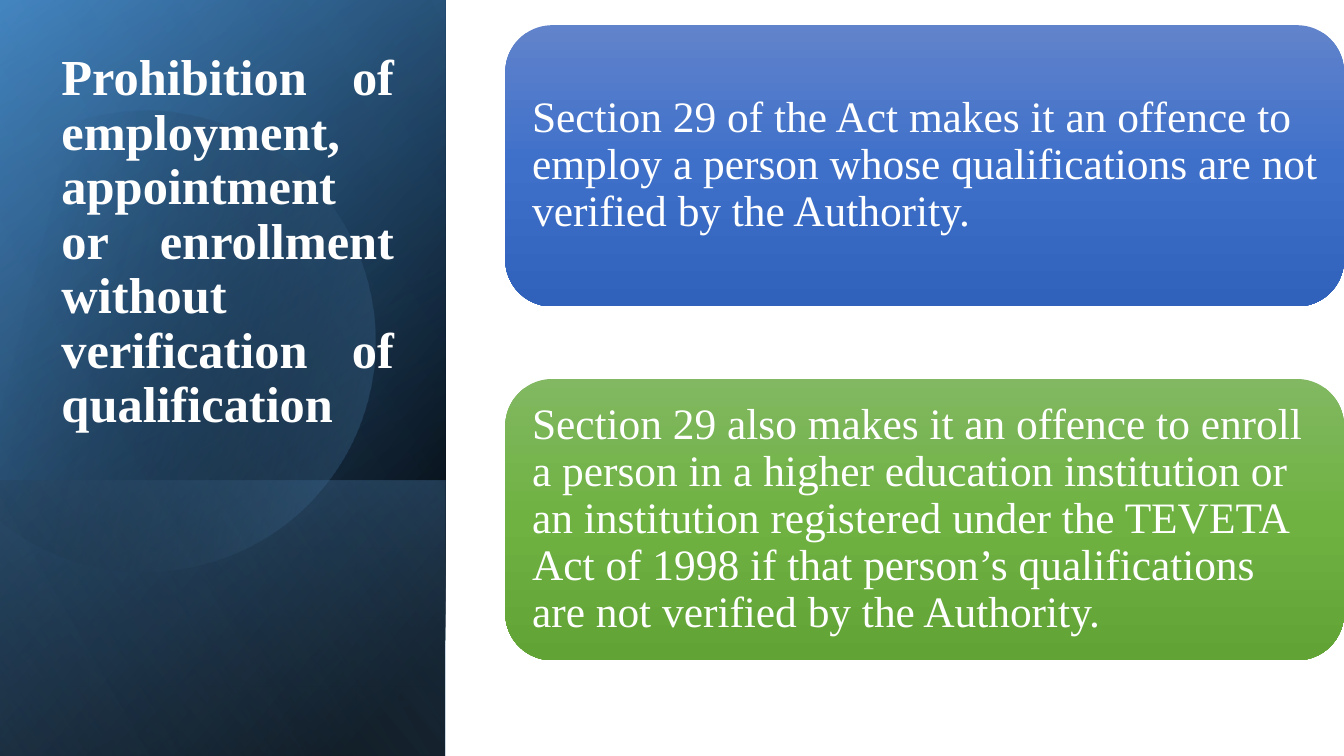
from math import cos, radians, sin

from lxml.etree import SubElement
from pptx import Presentation
from pptx.dml.color import RGBColor
from pptx.enum.shapes import MSO_SHAPE
from pptx.enum.text import MSO_ANCHOR, MSO_AUTO_SIZE, PP_ALIGN
from pptx.oxml.ns import qn
from pptx.util import Inches, Pt

SLIDE_W, SLIDE_H = 13.33, 7.5
PANEL_W = SLIDE_W * 0.3315
BAND_H = SLIDE_H * 0.365
CARD_LEFT, CARD_TOP = SLIDE_W * 0.376, SLIDE_H / 30
CARD_H, CARD_PITCH = 2.79, 3.51
FONT = "Times New Roman"
WHITE = "FFFFFF"

DISC_FRAME = (-0.55, 1.06, 4.27, 4.57)
DISC_TURN = -16.1
# Slide positions along the rim: six numbers make a curve, two a straight line.
DISC_START = (1.49, 1.1)
DISC_RIM = [
    (2.46, 1.12, 3.35, 1.77, 3.63, 2.75),
    (3.98, 3.97, 3.28, 5.23, 2.07, 5.58),
    (1.31, 5.8, 0.53, 5.61, -0.03, 5.14),
    (-0.15, 5.03),
    (-0.15, 1.75),
    (0, 1.61),
    (0.23, 1.42, 0.5, 1.28, 0.8, 1.19),
    (1.03, 1.13, 1.26, 1.1, 1.49, 1.1),
]

TITLE = ("Prohibition of employment, appointment or enrollment "
         "without verification of qualification")
CARDS = [
    ("Section 29 of the Act makes it an offence to employ a person whose "
     "qualifications are not verified by the Authority.",
     ["6183CB", "3E70CA", "3062BB"]),
    ("Section 29 also makes it an offence to enroll a person in a higher "
     "education institution or an institution registered under the TEVETA "
     "Act of 1998 if that person’s qualifications are not verified by the "
     "Authority.",
     ["81B861", "6FB242", "62A336"]),
]


def rgb(value):
    return RGBColor.from_string(value)


def apply_format(target, values):
    for name, value in values.items():
        setattr(target, name, value)


def gradient(shape, stops, angle):
    """Fill with (position %, colour, opacity %) stops, angle clockwise."""
    shape.shadow.inherit = False
    shape.line.fill.background()
    shape.fill.gradient()
    grad = shape._element.spPr.find(qn("a:gradFill"))
    for child in list(grad):
        grad.remove(child)
    grad.set("rotWithShape", "1")
    stop_list = SubElement(grad, qn("a:gsLst"))
    for position, colour, opacity in stops:
        stop = SubElement(stop_list, qn("a:gs"), pos=str(position * 1000))
        tint = SubElement(stop, qn("a:srgbClr"), val=colour)
        if opacity < 100:
            SubElement(tint, qn("a:alpha"), val=str(opacity * 1000))
    SubElement(grad, qn("a:lin"), ang=str(angle * 60000), scaled="0")


def add_panel_layer(slide, top, height, stops, angle):
    """Cover part of the left panel with a quarter-turned, mirrored rectangle."""
    left = (PANEL_W - height) / 2
    turned_top = top + (height - PANEL_W) / 2
    layer = slide.shapes.add_shape(
        MSO_SHAPE.RECTANGLE, Inches(left), Inches(turned_top),
        Inches(height), Inches(PANEL_W))
    layer.rotation = 90
    layer._element.spPr.xfrm.set("flipH", "1")
    gradient(layer, stops, angle)


def inside_disc_frame(x, y):
    """Turn a slide position back into the frame of the tilted disc."""
    left, top, width, height = DISC_FRAME
    dx, dy = x - left - width / 2, y - top - height / 2
    turn = radians(-DISC_TURN)
    return (Inches(width / 2 + dx * cos(turn) - dy * sin(turn)),
            Inches(height / 2 + dx * sin(turn) + dy * cos(turn)))


def add_cut_disc(slide, stops, angle):
    """Draw the tilted disc whose left side is cut off, with curved edges."""
    builder = slide.shapes.build_freeform(*inside_disc_frame(*DISC_START))
    builder.add_line_segments([inside_disc_frame(*step[-2:]) for step in DISC_RIM])
    disc = builder.convert_to_shape()
    frame = zip(("left", "top", "width", "height"), map(Inches, DISC_FRAME))
    apply_format(disc, {**dict(frame), "rotation": DISC_TURN})

    outline = next(disc._element.iter(qn("a:path")))
    for child in list(outline):
        outline.remove(child)
    outline.set("w", str(disc.width))
    outline.set("h", str(disc.height))
    for step in [DISC_START, *DISC_RIM]:
        kind = "cubicBezTo" if len(step) == 6 else "lnTo"
        move = SubElement(outline, qn("a:moveTo" if step is DISC_START else f"a:{kind}"))
        for position in zip(step[::2], step[1::2]):
            x, y = inside_disc_frame(*position)
            SubElement(move, qn("a:pt"), x=str(x), y=str(y))
    SubElement(outline, qn("a:close"))
    gradient(disc, stops, angle)


def write(frame, text, size, paragraph_format, frame_format, bold=False):
    apply_format(frame, {"word_wrap": True, "auto_size": MSO_AUTO_SIZE.NONE,
                         **frame_format})
    paragraph = frame.paragraphs[0]
    apply_format(paragraph, {"line_spacing": 0.9, **paragraph_format})
    run = paragraph.add_run()
    run.text = text
    apply_format(run.font, {"name": FONT, "size": Pt(size), "bold": bold})
    run.font.color.rgb = rgb(WHITE)


def add_title(slide):
    title = slide.shapes.title
    apply_format(title, {"left": Inches(0.51), "top": Inches(0.65),
                         "width": Inches(3.5), "height": Inches(3.7)})
    write(title.text_frame, TITLE, 36, {"alignment": PP_ALIGN.JUSTIFY},
          {"vertical_anchor": MSO_ANCHOR.BOTTOM}, bold=True)


def add_card(slide, row, text, colours):
    card = slide.shapes.add_shape(
        MSO_SHAPE.ROUNDED_RECTANGLE, Inches(CARD_LEFT),
        Inches(CARD_TOP + row * CARD_PITCH),
        Inches(SLIDE_W - CARD_LEFT), Inches(CARD_H))
    gradient(card, [(50 * i, colour, 100) for i, colour in enumerate(colours)], 90)
    sides = ("left", "top", "right", "bottom")
    margins = {f"margin_{side}": Inches(0.13) for side in sides}
    write(card.text_frame, text, 31, {"alignment": PP_ALIGN.LEFT},
          {"vertical_anchor": MSO_ANCHOR.MIDDLE, **margins})


def main():
    deck = Presentation()
    apply_format(deck, {"slide_width": Inches(SLIDE_W),
                        "slide_height": Inches(SLIDE_H)})
    slide = deck.slides.add_slide(deck.slide_layouts[5])
    slide.background.fill.solid()
    slide.background.fill.fore_color.rgb = rgb(WHITE)

    add_panel_layer(slide, 0, SLIDE_H,
                    [(8, "000000", 100), (100, "2E75B6", 100)], 50)
    add_panel_layer(slide, 0, SLIDE_H,
                    [(0, "000000", 0), (99, "5B9BD5", 46)], 30)
    add_panel_layer(slide, SLIDE_H - BAND_H, BAND_H,
                    [(2, "5B9BD5", 29), (100, "000000", 30)], 130)
    add_cut_disc(slide, [(29, "000000", 0), (100, "5B9BD5", 43)], 30)
    add_panel_layer(slide, 0, SLIDE_H,
                    [(0, "000000", 0), (99, "9DC3E6", 11)], 120)

    # The title placeholder moves in front of the panel.
    slide.shapes._spTree.append(slide.shapes.title._element)
    add_title(slide)
    for row, (text, colours) in enumerate(CARDS):
        add_card(slide, row, text, colours)
    deck.save("out.pptx")


if __name__ == "__main__":
    main()
